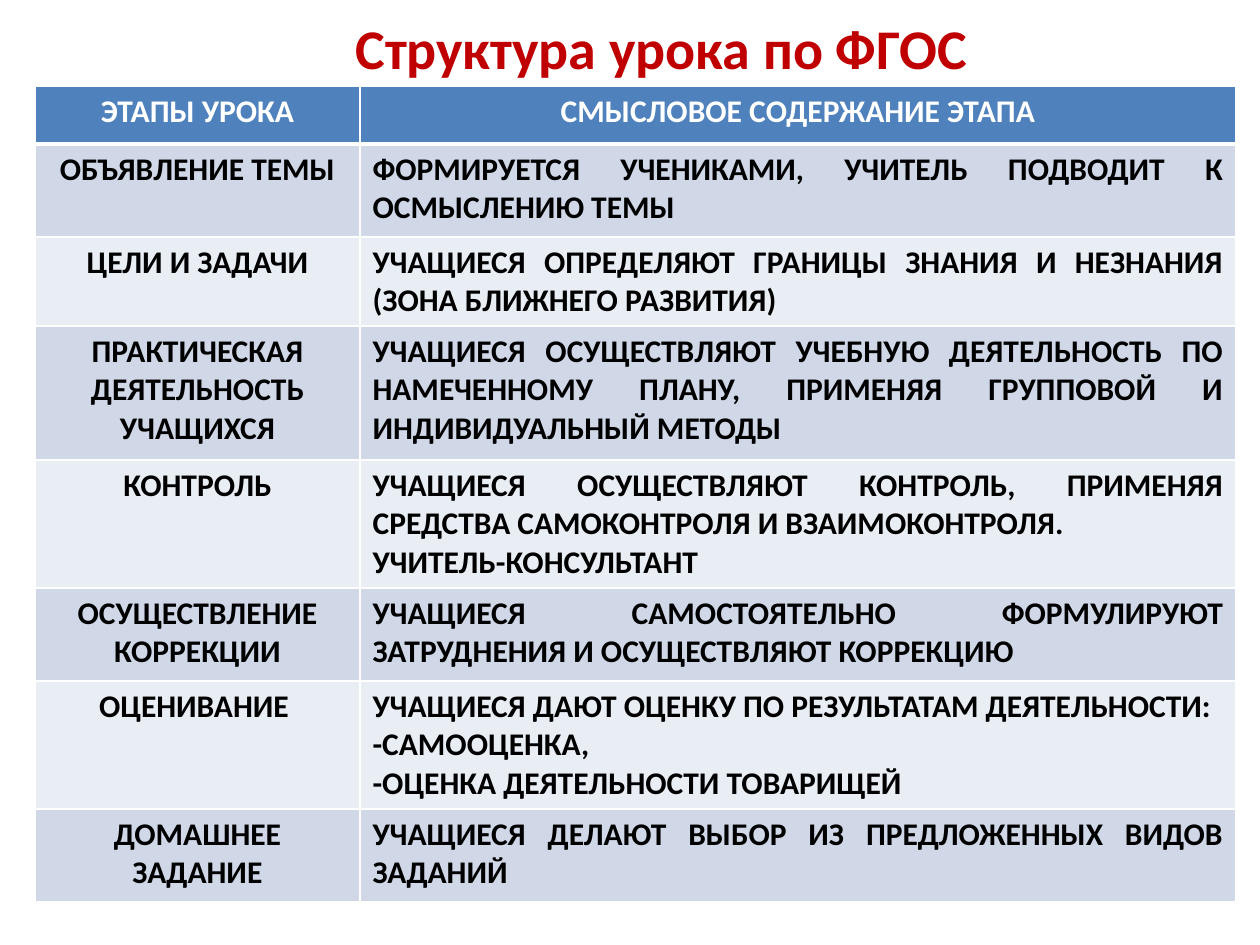
from lxml.etree import SubElement
from pptx import Presentation
from pptx.dml.color import RGBColor
from pptx.enum.text import MSO_ANCHOR as Anchor, PP_ALIGN as Align
from pptx.oxml.ns import qn
from pptx.util import Pt

PX = 914400 / 126
FONT = "Calibri"
RED = RGBColor(0xC0, 0x00, 0x00)
WHITE = RGBColor(0xFF, 0xFF, 0xFF)
BLACK = RGBColor(0x00, 0x00, 0x00)
BLUE = RGBColor(0x4F, 0x81, 0xBD)
BANDS = (RGBColor(0xD0, 0xD8, 0xE8), RGBColor(0xE9, 0xED, 0xF4))

COLUMN_WIDTHS = (325, 876)
HEADINGS = ("ЭТАПЫ УРОКА", "СМЫСЛОВОЕ СОДЕРЖАНИЕ ЭТАПА")
HEADING_HEIGHT = 58
STAGES = (
    (93, "ОБЪЯВЛЕНИЕ ТЕМЫ",
     "ФОРМИРУЕТСЯ УЧЕНИКАМИ, УЧИТЕЛЬ ПОДВОДИТ К ОСМЫСЛЕНИЮ ТЕМЫ"),
    (89, "ЦЕЛИ И ЗАДАЧИ",
     "УЧАЩИЕСЯ ОПРЕДЕЛЯЮТ ГРАНИЦЫ ЗНАНИЯ И НЕЗНАНИЯ (ЗОНА БЛИЖНЕГО РАЗВИТИЯ)"),
    (134, "ПРАКТИЧЕСКАЯ ДЕЯТЕЛЬНОСТЬ УЧАЩИХСЯ",
     "УЧАЩИЕСЯ ОСУЩЕСТВЛЯЮТ УЧЕБНУЮ ДЕЯТЕЛЬНОСТЬ ПО НАМЕЧЕННОМУ ПЛАНУ, "
     "ПРИМЕНЯЯ ГРУППОВОЙ И ИНДИВИДУАЛЬНЫЙ МЕТОДЫ"),
    (128, "КОНТРОЛЬ",
     "УЧАЩИЕСЯ ОСУЩЕСТВЛЯЮТ КОНТРОЛЬ, ПРИМЕНЯЯ СРЕДСТВА САМОКОНТРОЛЯ "
     "И ВЗАИМОКОНТРОЛЯ.\nУЧИТЕЛЬ-КОНСУЛЬТАНТ"),
    (93, "ОСУЩЕСТВЛЕНИЕ КОРРЕКЦИИ",
     "УЧАЩИЕСЯ САМОСТОЯТЕЛЬНО ФОРМУЛИРУЮТ ЗАТРУДНЕНИЯ И ОСУЩЕСТВЛЯЮТ КОРРЕКЦИЮ"),
    (128, "ОЦЕНИВАНИЕ ",
     "УЧАЩИЕСЯ ДАЮТ ОЦЕНКУ ПО РЕЗУЛЬТАТАМ ДЕЯТЕЛЬНОСТИ:\n"
     "-САМООЦЕНКА,\n-ОЦЕНКА ДЕЯТЕЛЬНОСТИ ТОВАРИЩЕЙ"),
    (93, "ДОМАШНЕЕ ЗАДАНИЕ",
     "УЧАЩИЕСЯ ДЕЛАЮТ ВЫБОР ИЗ ПРЕДЛОЖЕННЫХ ВИДОВ ЗАДАНИЙ"),
)


def px(length):
    return round(length * PX)


def write(frame, text, *, size=18, color=BLACK, align=Align.CENTER):
    """Fill the frame with bold text, one paragraph for each line."""
    for index, line in enumerate(text.split("\n")):
        para = frame.paragraphs[0] if index == 0 else frame.add_paragraph()
        para.alignment = align
        span = para.add_run()
        span.text = line
        span.font.name = FONT
        span.font.size = Pt(size)
        span.font.bold = True
        span.font.color.rgb = color


def add_borders(cell, **widths):
    """Draw white borders; widths in points are keyed L, R, T and B."""
    properties = cell._tc.get_or_add_tcPr()
    for side, width in widths.items():
        line = SubElement(properties, qn(f"a:ln{side}"), w=str(Pt(width)))
        fill = SubElement(line, qn("a:solidFill"))
        SubElement(fill, qn("a:srgbClr"), val=str(WHITE))


def add_title(page, left, top, width, height):
    box = page.shapes.add_textbox(px(left), px(top), px(width), px(height))
    frame = box.text_frame
    frame.word_wrap = True
    frame.vertical_anchor = Anchor.MIDDLE
    write(frame, "Структура урока по ФГОС", size=32, color=RED)


def add_stage_table(page, left, top):
    heights = [HEADING_HEIGHT] + [height for height, *_ in STAGES]
    rows = [HEADINGS] + [texts for _, *texts in STAGES]
    table = page.shapes.add_table(
        len(rows), len(COLUMN_WIDTHS), px(left), px(top),
        px(sum(COLUMN_WIDTHS)), px(sum(heights))).table
    for column, width in zip(table.columns, COLUMN_WIDTHS):
        column.width = px(width)
    for r, (height, texts) in enumerate(zip(heights, rows)):
        heading = r == 0
        table.rows[r].height = px(height)
        for c, text in enumerate(texts):
            cell = table.cell(r, c)
            add_borders(cell, L=1, R=1, T=3 if r == 1 else 1, B=3 if heading else 1)
            cell.fill.solid()
            cell.fill.fore_color.rgb = BLUE if heading else BANDS[(r - 1) % 2]
            write(cell.text_frame, text, color=WHITE if heading else BLACK,
                  align=Align.JUSTIFY if c and not heading else Align.CENTER)


def main():
    deck = Presentation()
    deck.slide_width, deck.slide_height = px(1260), px(945)
    page = deck.slides.add_slide(deck.slide_layouts[6])
    add_title(page, 126, 38, 1071, 18)
    add_stage_table(page, 35, 86)
    deck.save("out.pptx")


if __name__ == "__main__":
    main()
